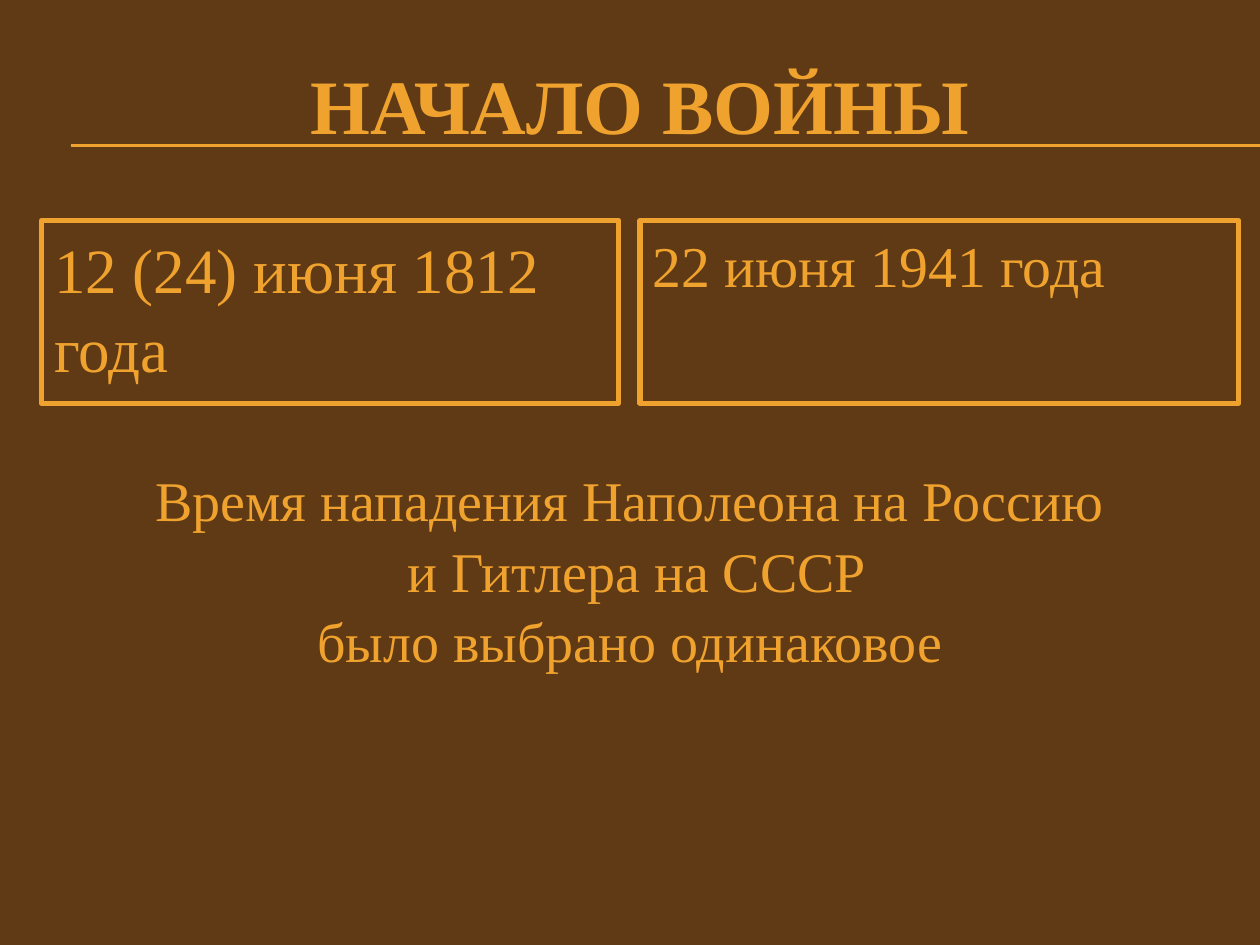
from dataclasses import dataclass

from lxml import etree
from pptx import Presentation
from pptx.dml.color import RGBColor
from pptx.enum.shapes import MSO_CONNECTOR
from pptx.enum.text import MSO_ANCHOR, MSO_AUTO_SIZE, PP_ALIGN
from pptx.oxml.ns import qn
from pptx.slide import Slide
from pptx.text.text import TextFrame
from pptx.util import Inches, Pt


@dataclass(frozen=True)
class Theme:
    background: RGBColor = RGBColor(0x60, 0x3A, 0x14)
    accent: RGBColor = RGBColor(0xF0, 0xA2, 0x2E)
    font: str = "Times New Roman"
    title_size: int = 44
    conclusion_size: int = 32
    rule_width: float = 0.75
    frame_width: float = 3


@dataclass(frozen=True)
class DateBox:
    placeholder: int
    text: str
    left: float
    width: float
    size: int


THEME = Theme()
DATE_TOP, DATE_HEIGHT = 1.75, 1.45
DATE_BOXES = (
    DateBox(1, "12 (24) июня 1812 года", 0.33, 4.58, 36),
    DateBox(2, "22 июня 1941 года", 5.08, 4.75, 33),
)
CONCLUSION = (
    "Время нападения Наполеона на Россию",
    " и Гитлера на СССР",
    "было выбрано одинаковое",
)
RULE_HEIGHTS = (1.15, 1.16)


def place(shape, left: float, top: float, width: float, height: float) -> None:
    box = {"left": left, "top": top, "width": width, "height": height}
    for side, length in box.items():
        setattr(shape, side, Inches(length))


def write(frame: TextFrame, lines: tuple[str, ...], size: int,
          bold: bool = False, **paragraph_format) -> None:
    """Fill the frame with one paragraph per line in the theme's font."""
    frame.word_wrap = True
    frame.auto_size = MSO_AUTO_SIZE.NONE
    frame.text = "\n".join(lines)
    font_format = {"name": THEME.font, "size": Pt(size), "bold": bold}
    for paragraph in frame.paragraphs:
        for name, value in paragraph_format.items():
            setattr(paragraph, name, value)
        for run in paragraph.runs:
            for name, value in font_format.items():
                setattr(run.font, name, value)
            run.font.color.rgb = THEME.accent


def remove_bullets(frame: TextFrame) -> None:
    for paragraph in frame.paragraphs:
        properties = paragraph._p.get_or_add_pPr()
        properties.set("marL", "0")
        properties.set("indent", "0")
        etree.SubElement(properties, qn("a:buNone"))


def add_rule(slide: Slide, height: float) -> None:
    rule = slide.shapes.add_connector(
        MSO_CONNECTOR.STRAIGHT, Inches(0.56), Inches(height), Inches(10), Inches(height))
    rule.line.color.rgb = THEME.accent
    rule.line.width = Pt(THEME.rule_width)
    etree.SubElement(rule._element.spPr, qn("a:effectLst"))


def fill_title(slide: Slide) -> None:
    title = slide.shapes.title
    place(title, 0.33, 0.36, 9.5, 0.92)
    write(title.text_frame, ("НАЧАЛО ВОЙНЫ",), THEME.title_size, bold=True,
          alignment=PP_ALIGN.CENTER)
    title.text_frame.vertical_anchor = MSO_ANCHOR.MIDDLE


def fill_date(slide: Slide, date: DateBox) -> None:
    body = slide.placeholders[date.placeholder]
    place(body, date.left, DATE_TOP, date.width, DATE_HEIGHT)
    body.line.color.rgb = THEME.accent
    body.line.width = Pt(THEME.frame_width)
    write(body.text_frame, (date.text,), date.size,
          space_before=Pt(0.2 * date.size), line_spacing=1.05)
    body.text_frame.vertical_anchor = MSO_ANCHOR.TOP
    remove_bullets(body.text_frame)


def add_conclusion(slide: Slide) -> None:
    conclusion = slide.shapes.add_textbox(0, Inches(3.62), Inches(10), Inches(1.72))
    write(conclusion.text_frame, CONCLUSION, THEME.conclusion_size,
          alignment=PP_ALIGN.CENTER, line_spacing=1.05)
    conclusion.text_frame.auto_size = MSO_AUTO_SIZE.SHAPE_TO_FIT_TEXT


def main() -> None:
    presentation = Presentation()
    presentation.slide_width = Inches(10)
    presentation.slide_height = Inches(7.5)
    slide = presentation.slides.add_slide(
        presentation.slide_layouts.get_by_name("Two Content"))
    slide.background.fill.solid()
    slide.background.fill.fore_color.rgb = THEME.background

    for height in RULE_HEIGHTS:
        add_rule(slide, height)
    fill_title(slide)
    for date in DATE_BOXES:
        fill_date(slide, date)
    add_conclusion(slide)
    presentation.save("out.pptx")


if __name__ == "__main__":
    main()
